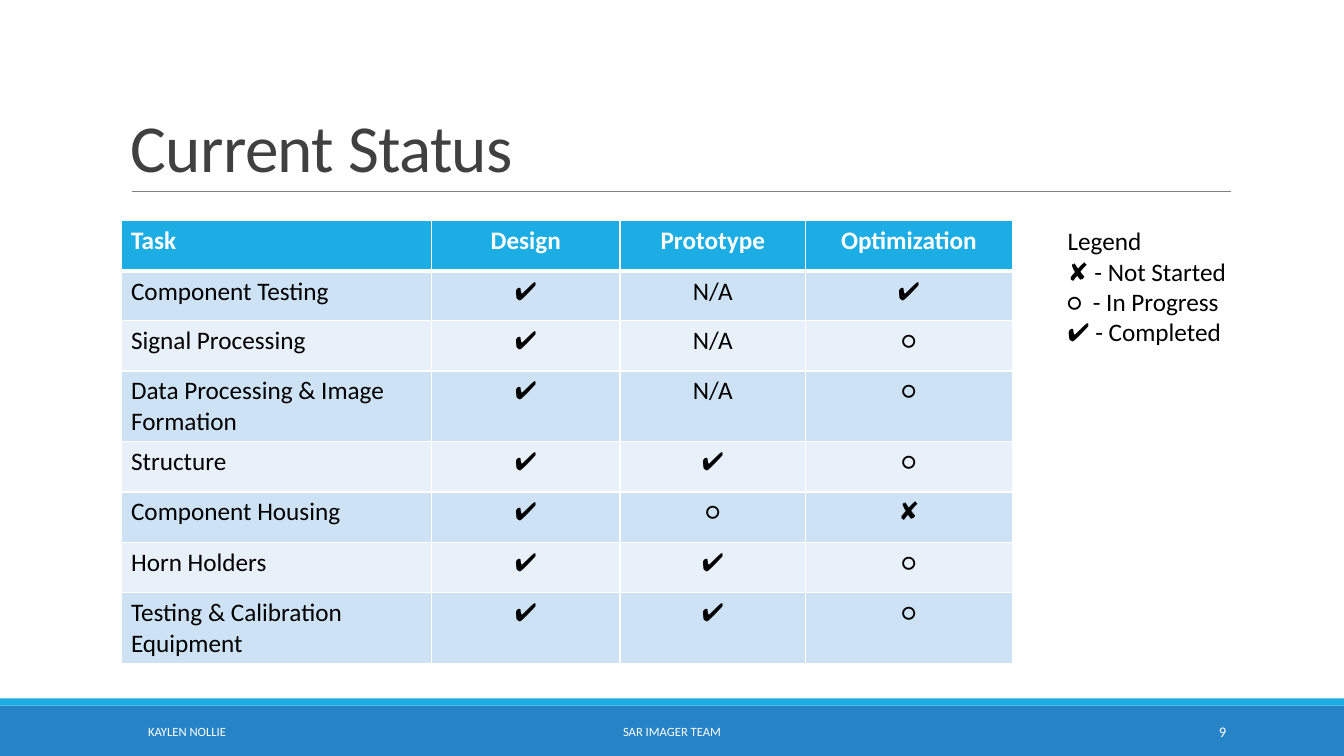
from lxml import etree
from pptx import Presentation
from pptx import util as u
from pptx.dml.color import RGBColor
from pptx.enum import shapes, text
from pptx.oxml.ns import qn

COLORS = {
    "footer": "2683C6", "accent": "1CADE4", "rule": "808080", "title": "404040",
    "white": "FFFFFF", "black": "000000", "band_dark": "CDE3F5", "band_light": "E8F1FA",
}
FONT = "Calibri"
LEFT, CENTER, RIGHT = text.PP_ALIGN.LEFT, text.PP_ALIGN.CENTER, text.PP_ALIGN.RIGHT
TOP, MIDDLE, BOTTOM = text.MSO_ANCHOR.TOP, text.MSO_ANCHOR.MIDDLE, text.MSO_ANCHOR.BOTTOM

DONE, ONGOING, WAITING = "✔", "○", "✘"
STATUS = [
    ("Task", "Design", "Prototype", "Optimization"),
    ("Component Testing", DONE, "N/A", DONE),
    ("Signal Processing", DONE, "N/A", ONGOING),
    ("Data Processing & Image Formation", DONE, "N/A", ONGOING),
    ("Structure", DONE, DONE, ONGOING),
    ("Component Housing", DONE, ONGOING, WAITING),
    ("Horn Holders", DONE, DONE, ONGOING),
    ("Testing & Calibration Equipment", DONE, DONE, ONGOING),
]
LEGEND = f"Legend\n{WAITING} - Not Started\n{ONGOING}  - In Progress\n{DONE} - Completed"
TASK_WIDTHS = (3.08, 1.87, 1.84, 2.05)
ROW_HEIGHTS = (0.5, 0.49, 0.5, 0.7, 0.5, 0.5, 0.5, 0.7)


def rgb(name):
    """Return the named colour."""
    return RGBColor.from_string(COLORS[name])


def write(frame, words, size, color, align=LEFT, bold=False):
    """Put formatted words into a text frame."""
    frame.text = words
    for paragraph in frame.paragraphs:
        paragraph.alignment = align
        for run in paragraph.runs:
            run.font.name = FONT
            run.font.size = u.Pt(size)
            run.font.bold = bold
            run.font.color.rgb = rgb(color)


def add_label(slide, box, words, size, color, align=LEFT, anchor=TOP):
    """Add a wrapping text box and return its text frame."""
    frame = slide.shapes.add_textbox(*map(u.Inches, box)).text_frame
    frame.word_wrap = True
    frame.vertical_anchor = anchor
    write(frame, words, size, color, align)
    return frame


def add_title(slide, words):
    """Add the heading with tight line and letter spacing."""
    heading = add_label(slide, (1.2, 0.31, 11, 1.59), words, 48, "title", anchor=BOTTOM)
    heading.paragraphs[0].line_spacing = 0.85
    heading.paragraphs[0].runs[0].font._element.set("spc", "-50")


def add_band(slide, top, height, color):
    """Add a full-width footer band."""
    band = slide.shapes.add_shape(
        shapes.MSO_SHAPE.RECTANGLE, 0, u.Inches(top), u.Inches(13.33), u.Inches(height))
    band.shadow.inherit = False
    band.fill.solid()
    band.fill.fore_color.rgb = rgb(color)
    band.line.fill.background()


def add_rule(slide, left, right, y):
    """Add the thin horizontal rule under the title."""
    rule = slide.shapes.add_connector(
        shapes.MSO_CONNECTOR.STRAIGHT, *map(u.Inches, (left, y, right, y)))
    rule.line.color.rgb = rgb("rule")
    rule.line.width = u.Pt(0.5)
    etree.SubElement(rule._element.spPr, qn("a:effectLst"))


def add_borders(cell, bottom):
    """Draw white cell borders, with the bottom one in the given points."""
    properties = cell._tc.get_or_add_tcPr()
    for index, (side, width) in enumerate(zip("LRTB", (1, 1, 1, bottom))):
        border = etree.Element(qn(f"a:ln{side}"), w=str(u.Pt(width)))
        fill = etree.SubElement(border, qn("a:solidFill"))
        etree.SubElement(fill, qn("a:srgbClr"), val=COLORS["white"])
        properties.insert(index, border)


def add_status_table(slide):
    """Add the task table with a header and alternating rows."""
    table = slide.shapes.add_table(
        len(STATUS), len(TASK_WIDTHS), u.Inches(1.2), u.Inches(2.19),
        u.Inches(sum(TASK_WIDTHS)), u.Inches(sum(ROW_HEIGHTS))).table
    for column, width in zip(table.columns, TASK_WIDTHS):
        column.width = u.Inches(width)
    for r, (row, height, entries) in enumerate(zip(table.rows, ROW_HEIGHTS, STATUS)):
        row.height = u.Inches(height)
        header = r == 0
        band = "accent" if header else "band_dark" if r % 2 else "band_light"
        for c, entry in enumerate(entries):
            cell = table.cell(r, c)
            write(cell.text_frame, entry, 18, "white" if header else "black",
                  CENTER if c else LEFT, header)
            cell.fill.solid()
            cell.fill.fore_color.rgb = rgb(band)
            add_borders(cell, 3 if header else 1)


def main():
    """Build the status slide."""
    deck = Presentation()
    deck.slide_width, deck.slide_height = u.Inches(13.33), u.Inches(7.5)
    slide = deck.slides.add_slide(deck.slide_layouts[6])
    add_band(slide, 7, 0.5, "footer")
    add_band(slide, 6.93, 0.07, "accent")
    add_rule(slide, 1.31, 12.21, 1.9)
    add_title(slide, "Current Status")
    add_status_table(slide)
    add_label(slide, (10.49, 2.19, 2.03, 1.62), LEGEND, 18, "black")
    for left, width, words, size, align in (
        (4.03, 5.27, "SAR IMAGER TEAM", 9, CENTER),
        (10.83, 1.43, "9", 10.5, RIGHT),
        (0.58, 2.55, "KAYLEN NOLLIE", 9, CENTER),
    ):
        add_label(slide, (left, 7.06, width, 0.4), words, size, "white", align, MIDDLE)
    deck.save("out.pptx")


if __name__ == "__main__":
    main()
